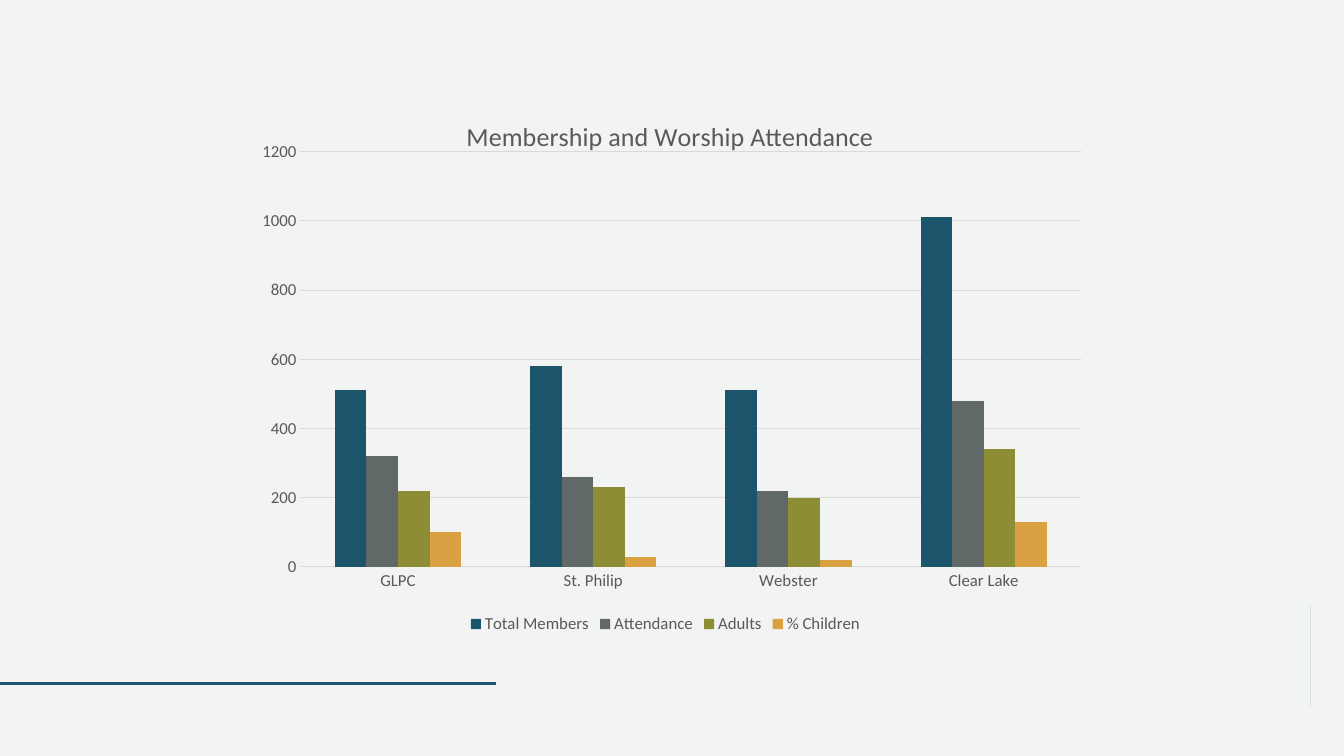
import math

import pptx
import pptx.chart.data
import pptx.dml.color
import pptx.enum.chart
import pptx.enum.shapes
import pptx.oxml
import pptx.oxml.ns
import pptx.util

RGBColor = pptx.dml.color.RGBColor
Inches, Pt = pptx.util.Inches, pptx.util.Pt
qn, nsdecls = pptx.oxml.ns.qn, pptx.oxml.ns.nsdecls

BACKGROUND = RGBColor(0xF2, 0xF3, 0xF3)
TEAL = RGBColor(0x1C, 0x54, 0x6B)
GRAY = RGBColor(0x60, 0x69, 0x68)
OLIVE = RGBColor(0x8D, 0x8D, 0x35)
AMBER = RGBColor(0xD9, 0xA1, 0x42)
TEXT = RGBColor(0x59, 0x59, 0x59)
GRID = RGBColor(0xD9, 0xD9, 0xD9)

WIDTH, HEIGHT = 13.33, 7.5
RULE_Y, RADIUS = 6.78, 0.45

CHURCHES = ["GLPC", "St. Philip", "Webster", "Clear Lake"]
SERIES = [
    ("Total Members", (510, 580, 510, 1010), TEAL),
    ("Attendance", (320, 260, 220, 480), GRAY),
    ("Adults", (220, 230, 200, 340), OLIVE),
    ("% Children", (100, 30, 20, 130), AMBER),
]


def format_font(font, size):
    for name, value in {"name": "Calibri", "size": Pt(size), "bold": False}.items():
        setattr(font, name, value)
    font.color.rgb = TEXT


def set_layout(parent, index, target="", **shares):
    """Place a chart part by shares of the chart's size."""
    for old in parent.findall(qn("c:layout")):
        parent.remove(old)
    inner = f'<c:layoutTarget val="{target}"/>' if target else ""
    inner += '<c:xMode val="edge"/><c:yMode val="edge"/>'
    inner += "".join(f'<c:{k} val="{v}"/>' for k, v in shares.items())
    parent.insert(index, pptx.oxml.parse_xml(
        f'<c:layout {nsdecls("c")}><c:manualLayout>{inner}</c:manualLayout></c:layout>'))


prs = pptx.Presentation()
prs.slide_width, prs.slide_height = Inches(WIDTH), Inches(HEIGHT)
s = prs.slides.add_slide(prs.slide_layouts[6])
s.background.fill.solid()
s.background.fill.fore_color.rgb = BACKGROUND

# Half disc at the right edge, resting on the level of the rule
arc = [(WIDTH - RADIUS * math.sin(math.radians(a)),
        RULE_Y - RADIUS - RADIUS * math.cos(math.radians(a)))
       for a in range(0, 181, 4)]
builder = s.shapes.build_freeform(*arc[0], scale=Inches(1))
builder.add_line_segments(arc[1:], close=True)
sp = builder.convert_to_shape()
sp.shadow.inherit = False
sp.fill.solid()
sp.fill.fore_color.rgb = TEAL
sp.line.fill.background()

# Rule from the left edge
rule = s.shapes.add_connector(
    pptx.enum.shapes.MSO_CONNECTOR.STRAIGHT,
    0, Inches(RULE_Y), Inches(4.92), Inches(RULE_Y))
rule.line.color.rgb = TEAL
rule.line.width = Pt(2)
rule._element.spPr.append(pptx.oxml.parse_xml(f'<a:effectLst {nsdecls("a")}/>'))

# Chart
data = pptx.chart.data.CategoryChartData()
data.categories = CHURCHES
for name, values, color in SERIES:
    data.add_series(name, values)
chart = s.shapes.add_chart(
    pptx.enum.chart.XL_CHART_TYPE.COLUMN_CLUSTERED,
    Inches(2.39), Inches(0.91), Inches(8.42), Inches(5.42), data).chart
format_font(chart.font, 12)

plot = chart.plots[0]
for name, value in {"gap_width": 219, "overlap": 0, "vary_by_categories": False}.items():
    setattr(plot, name, value)
for series, (name, values, color) in zip(plot.series, SERIES):
    series.format.fill.solid()
    series.format.fill.fore_color.rgb = color
set_layout(chart._chartSpace.chart.plotArea, 0, "inner", x=0.07, y=0.11, w=0.92, h=0.76)

# Chart title
tf = chart.chart_title.text_frame
tf.text = "Membership and Worship Attendance"
format_font(tf.paragraphs[0].runs[0].font, 18.6)
chart.chart_title.include_in_layout = False
set_layout(chart.chart_title._element, 1, x=0.26, y=0.04)

# Axes
value_axis, category_axis = chart.value_axis, chart.category_axis
for axis in (value_axis, category_axis):
    axis.major_tick_mark = pptx.enum.chart.XL_TICK_MARK.NONE
    format_font(axis.tick_labels.font, 12)
for name, value in {"minimum_scale": 0, "maximum_scale": 1200, "major_unit": 200}.items():
    setattr(value_axis, name, value)
value_axis.format.line.fill.background()
for line in (value_axis.major_gridlines.format.line, category_axis.format.line):
    line.color.rgb = GRID
    line.width = Pt(0.75)

# Legend
chart.has_legend = True
chart.legend.position = pptx.enum.chart.XL_LEGEND_POSITION.BOTTOM
chart.legend.include_in_layout = False
format_font(chart.legend.font, 12)

prs.save("out.pptx")
